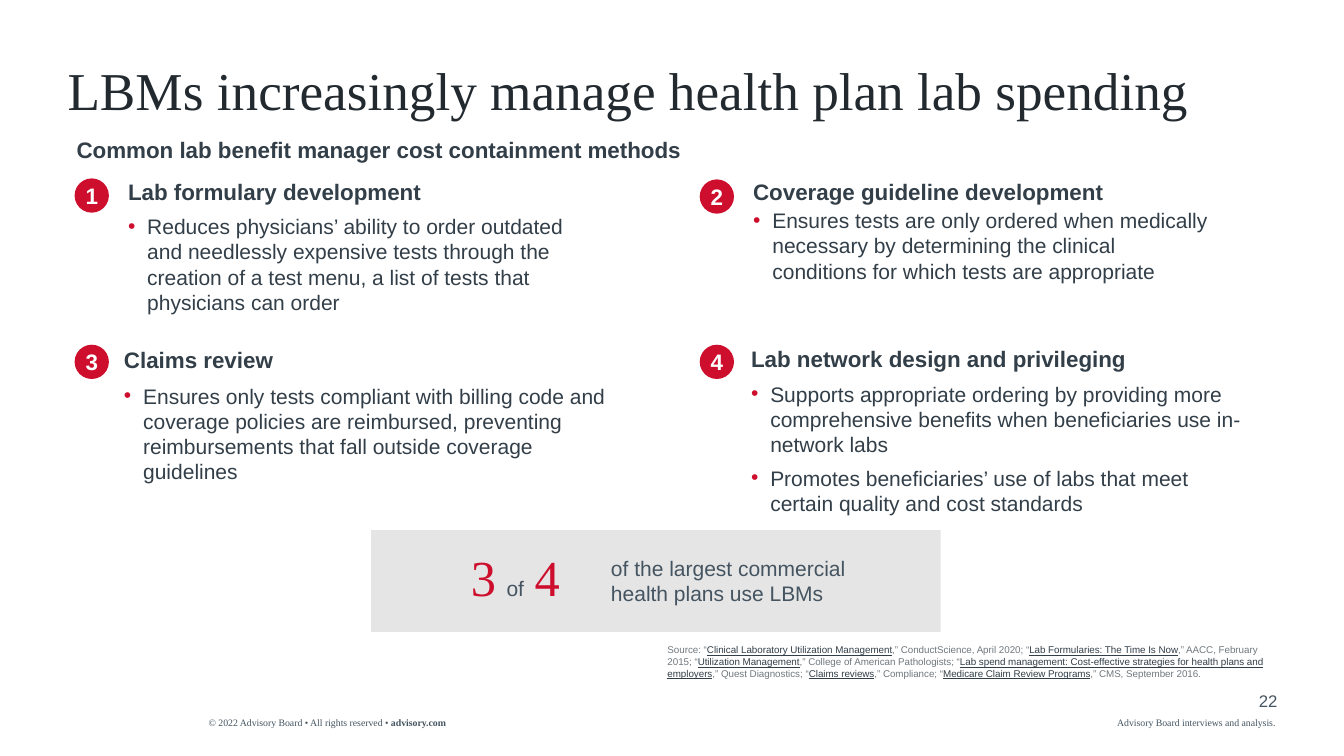
from lxml.etree import SubElement
from pptx import Presentation
from pptx.dml.color import RGBColor
from pptx.enum.shapes import MSO_SHAPE
from pptx.enum.text import MSO_ANCHOR, PP_ALIGN
from pptx.oxml.ns import qn
from pptx.util import Inches, Pt

RED = RGBColor(0xCE, 0x0E, 0x2D)
INK = RGBColor(0x22, 0x2A, 0x30)
DARK = RGBColor(0x32, 0x3E, 0x48)
SLATE = RGBColor(0x44, 0x54, 0x60)
GREY = RGBColor(0x70, 0x78, 0x7E)
PALE = RGBColor(0xE5, 0xE5, 0xE5)
WHITE = RGBColor(0xFF, 0xFF, 0xFF)
SANS, SERIF = "Arial", "Times New Roman"

prs = Presentation()
prs.slide_width, prs.slide_height = Inches(13.33), Inches(7.5)
slide = prs.slides.add_slide(prs.slide_layouts[6])


def add_textbox(left, top, width, height, anchor=MSO_ANCHOR.TOP):
    """Add a wrapping text box without margins and return its text frame."""
    frame = slide.shapes.add_textbox(
        Inches(left), Inches(top), Inches(width), Inches(height)).text_frame
    frame.word_wrap = True
    frame.vertical_anchor = anchor
    frame.margin_left = frame.margin_top = frame.margin_right = frame.margin_bottom = 0
    return frame


def add_run(paragraph, text, size, color, font=SANS, bold=False, underline=False):
    run = paragraph.add_run()
    run.text = text
    run.font.size, run.font.name = Pt(size), font
    run.font.bold, run.font.underline = bold, underline
    run.font.color.rgb = color


# Title and subtitle
title = add_textbox(0.67, 0.64, 12, 0.59).paragraphs[0]
title.line_spacing = 0.9
add_run(title, "LBMs increasingly manage health plan lab spending", 38, INK, SERIF)
subtitle = add_textbox(0.76, 1.35, 10.62, 0.27).paragraphs[0]
add_run(subtitle, "Common lab benefit manager cost containment methods", 16, DARK, bold=True)

# Methods: badge position, heading position, bullet top and width, heading, bullets
methods = [
    (0.74, 1.77, 1.27, 1.77, 2.12, 4.41, "Lab formulary development",
     ["Reduces physicians’ ability to order outdated and needlessly expensive tests "
      "through the creation of a test menu, a list of tests that physicians can order"]),
    (6.94, 1.78, 7.47, 1.77, 2.06, 4.59, "Coverage guideline development",
     ["Ensures tests are only ordered when medically necessary by determining the "
      "clinical conditions for which tests are appropriate"]),
    (0.74, 3.42, 1.23, 3.43, 3.8, 4.93, "Claims review",
     ["Ensures only tests compliant with billing code and coverage policies are "
      "reimbursed, preventing reimbursements that fall outside coverage guidelines"]),
    (6.94, 3.42, 7.45, 3.42, 3.78, 4.93, "Lab network design and privileging",
     ["Supports appropriate ordering by providing more comprehensive benefits when "
      "beneficiaries use in-network labs",
      "Promotes beneficiaries’ use of labs that meet certain quality and cost standards"]),
]
for number, (badge_left, badge_top, left, heading_top, bullets_top, width,
             heading, bullets) in enumerate(methods, start=1):
    badge = slide.shapes.add_shape(MSO_SHAPE.OVAL, Inches(badge_left), Inches(badge_top),
                                   Inches(0.34), Inches(0.34))
    badge.shadow.inherit = False
    badge.fill.solid()
    badge.fill.fore_color.rgb = RED
    badge.line.fill.background()
    label = badge.text_frame
    label.margin_left = label.margin_top = label.margin_right = label.margin_bottom = 0
    label.vertical_anchor = MSO_ANCHOR.MIDDLE
    label.paragraphs[0].alignment = PP_ALIGN.CENTER
    add_run(label.paragraphs[0], str(number), 16, WHITE, bold=True)

    heading_line = add_textbox(left, heading_top, 4.93, 0.27).paragraphs[0]
    add_run(heading_line, heading, 16, DARK, bold=True)

    bullet_frame = add_textbox(left, bullets_top, width, 1.01)
    for index, bullet in enumerate(bullets):
        item = bullet_frame.add_paragraph() if index else bullet_frame.paragraphs[0]
        properties = item._p.get_or_add_pPr()
        properties.set("marL", str(Inches(0.19)))
        properties.set("indent", str(-Inches(0.19)))
        bullet_color = SubElement(properties, qn("a:buClr"))
        SubElement(bullet_color, qn("a:srgbClr")).set("val", str(RED))
        SubElement(properties, qn("a:buFont")).set("typeface", SANS)
        SubElement(properties, qn("a:buChar")).set("char", "•")
        if index:
            item.space_before = Pt(6)
        add_run(item, bullet, 15, DARK)

# Key figure
panel = slide.shapes.add_shape(MSO_SHAPE.RECTANGLE, Inches(3.68), Inches(5.26),
                               Inches(5.65), Inches(1.01))
panel.shadow.inherit = False
panel.fill.solid()
panel.fill.fore_color.rgb = PALE
panel.line.fill.background()
figure = add_textbox(4.67, 5.42, 0.97, 0.61).paragraphs[0]
add_run(figure, "3", 36, RED, SERIF)
add_run(figure, " ", 30, DARK, SERIF)
add_run(figure, "of", 15, SLATE)
add_run(figure, " ", 30, DARK, SERIF)
add_run(figure, "4", 36, RED, SERIF)
finding = add_textbox(6.06, 5.51, 2.75, 0.5).paragraphs[0]
add_run(finding, "of the largest commercial health plans use LBMs", 15, SLATE)

# Sources: cited titles are underlined, each followed by its publisher
citations = [
    ("Clinical Laboratory Utilization Management", ",” ConductScience, April 2020; “"),
    ("Lab Formularies: The Time Is Now", ",” AACC, February 2015; “"),
    ("Utilization Management", ",” College of American Pathologists; “"),
    ("Lab spend management: Cost-effective strategies for health plans and employers",
     ",” Quest Diagnostics; “"),
    ("Claims reviews", ",” Compliance; “"),
    ("Medicare Claim Review Programs", ",” CMS, September 2016."),
]
sources = add_textbox(6.62, 6.39, 6.04, 0.35, MSO_ANCHOR.BOTTOM).paragraphs[0]
add_run(sources, "Source: “", 7, GREY)
for cited_title, publisher in citations:
    add_run(sources, cited_title, 7, DARK, underline=True)
    add_run(sources, publisher, 7, GREY)

# Footer
copyright_line = add_textbox(2.07, 7.11, 3.26, 0.12).paragraphs[0]
add_run(copyright_line, "© 2022 Advisory Board • All rights reserved • ", 7, SLATE, SERIF)
add_run(copyright_line, "advisory.com", 7, SLATE, SERIF, bold=True)
credit = add_textbox(11.08, 7.11, 1.59, 0.12).paragraphs[0]
add_run(credit, "Advisory Board interviews and analysis.", 7, SLATE, SERIF)
page_number = add_textbox(12.17, 6.85, 0.5, 0.2).paragraphs[0]
page_number.alignment = PP_ALIGN.RIGHT
add_run(page_number, "22", 12, SLATE)

prs.save("out.pptx")
